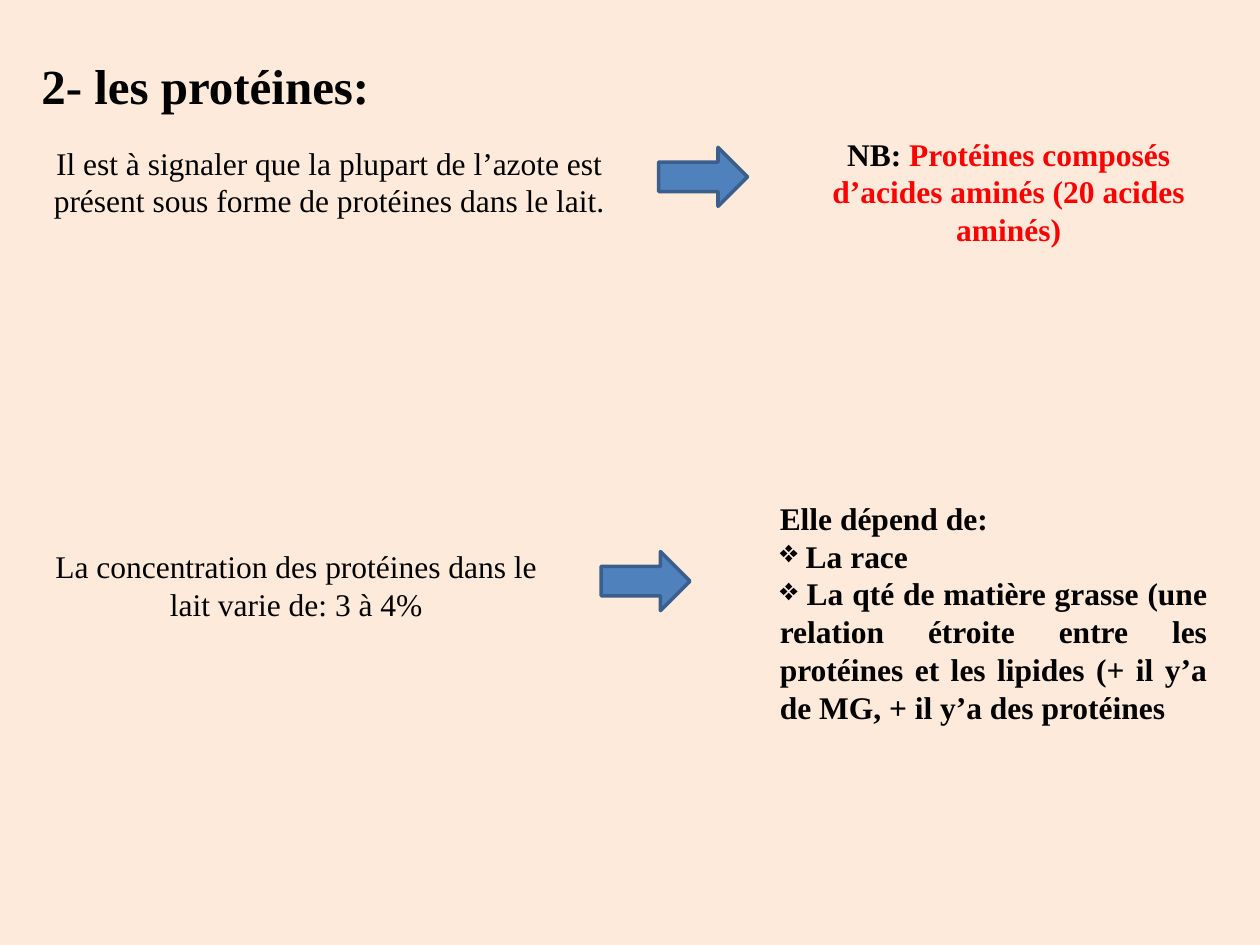
import pptx
import pptx.util
import pptx.dml.color
import pptx.enum.shapes
import pptx.enum.text
import pptx.oxml.ns
from lxml import etree

Cm = pptx.util.Cm
Pt = pptx.util.Pt
RGBColor = pptx.dml.color.RGBColor
ALIGN = pptx.enum.text.PP_ALIGN

CREAM = RGBColor(0xFD, 0xEA, 0xDA)
BLACK = RGBColor(0, 0, 0)
RED = RGBColor(0xFF, 0, 0)
BLUE = RGBColor(0x4F, 0x81, 0xBD)
DARK_BLUE = RGBColor(0x3A, 0x5F, 0x8C)
FONT = "Times New Roman"


def format_run(run, size=18, bold=False, color=BLACK):
    run.font.name = FONT
    run.font.size = Pt(size)
    run.font.bold = bold
    run.font.color.rgb = color


def place(shape, left, top, width, height):
    shape.left, shape.top = Cm(left), Cm(top)
    shape.width, shape.height = Cm(width), Cm(height)


def set_title(slide, text):
    title = slide.shapes.title
    place(title, 0.58, 0.99, 11.91, 1.45)
    frame = title.text_frame
    frame.text = text
    frame.word_wrap = True
    frame.auto_size = pptx.enum.text.MSO_AUTO_SIZE.NONE
    frame.vertical_anchor = pptx.enum.text.MSO_ANCHOR.TOP
    frame.paragraphs[0].alignment = ALIGN.LEFT
    format_run(frame.paragraphs[0].runs[0], size=28, bold=True)


def add_text(slide, box, text, align=ALIGN.CENTER, bold=False):
    frame = slide.shapes.add_textbox(*map(Cm, box)).text_frame
    frame.word_wrap = True
    frame.text = text
    for paragraph in frame.paragraphs:
        paragraph.alignment = align
        for run in paragraph.runs:
            format_run(run, bold=bold)
    return frame


def add_bullet(paragraph):
    properties = paragraph._p.get_or_add_pPr()
    properties.set("marL", "0")
    properties.set("indent", "0")
    bullet = etree.SubElement(properties, pptx.oxml.ns.qn("a:buChar"))
    bullet.set("char", "❖")


def add_arrow(slide, left, top):
    arrow = slide.shapes.add_shape(
        pptx.enum.shapes.MSO_SHAPE.RIGHT_ARROW, Cm(left), Cm(top), Cm(1.79), Cm(1.19))
    arrow.shadow.inherit = False
    arrow.fill.solid()
    arrow.fill.fore_color.rgb = BLUE
    arrow.line.color.rgb = DARK_BLUE
    arrow.line.width = Pt(2)


def main():
    deck = pptx.Presentation()
    deck.slide_width, deck.slide_height = Cm(25.4), Cm(19.05)
    slide = deck.slides.add_slide(deck.slide_layouts[5])
    slide.background.fill.solid()
    slide.background.fill.fore_color.rgb = CREAM

    set_title(slide, "2- les protéines:")
    add_text(slide, (0.58, 2.77, 12.12, 1.8),
             "Il est à signaler que la plupart de l’azote est présent "
             "sous forme de protéines dans le lait.")
    note = add_text(slide, (16.46, 2.59, 7.75, 2.57), "NB:", bold=True)
    composition = note.paragraphs[0].add_run()
    composition.text = " Protéines composés d’acides aminés (20 acides aminés)"
    format_run(composition, bold=True, color=RED)
    add_arrow(slide, 13.28, 2.97)

    add_text(slide, (0.41, 10.9, 11.13, 1.8),
             "La concentration des protéines dans le lait varie de: 3 à 4%")
    add_arrow(slide, 12.12, 11.12)
    factors = add_text(
        slide, (15.47, 9.93, 9.12, 4.88),
        "Elle dépend de: \n La race\n La qté de matière grasse "
        "(une relation étroite entre les protéines et les lipides "
        "(+ il y’a de MG, + il y’a des protéines",
        align=ALIGN.JUSTIFY, bold=True)
    for factor in factors.paragraphs[1:]:
        add_bullet(factor)

    deck.save("out.pptx")


if __name__ == "__main__":
    main()
